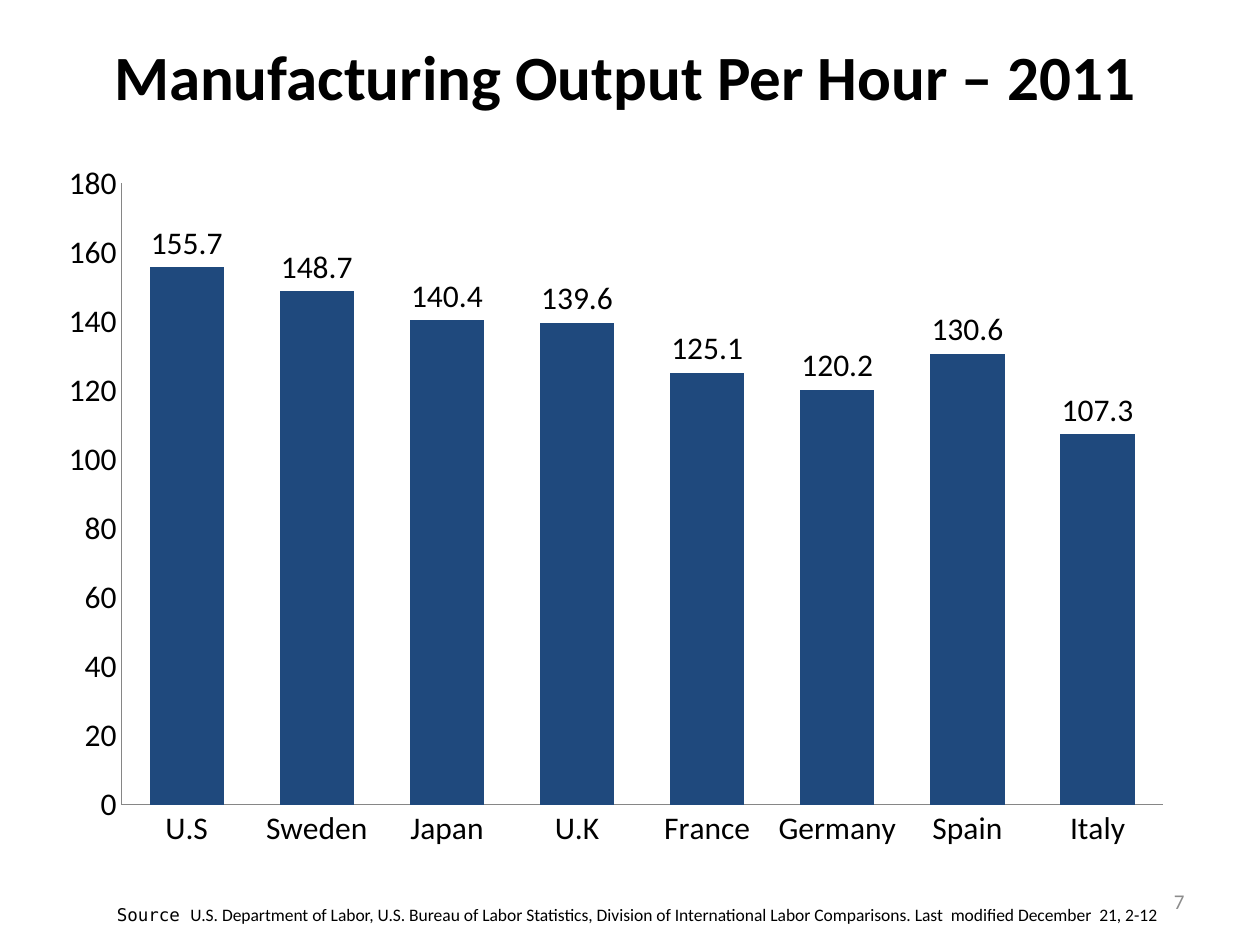
from lxml import etree
from pptx import Presentation
from pptx import util as u
from pptx.chart.data import CategoryChartData
from pptx.dml.color import RGBColor
from pptx.enum import chart as ch, text
from pptx.oxml.ns import qn

COLORS = {"text": "000000", "bar": "1F497D", "axis": "868686", "number": "8C8C8C"}
SANS, MONO = "Calibri", "DejaVu Sans Mono"

OUTPUT = [
    ("U.S", 155.7), ("Sweden", 148.7), ("Japan", 140.4), ("U.K", 139.6),
    ("France", 125.1), ("Germany", 120.2), ("Spain", 130.6), ("Italy", 107.3),
]
CHART_BOX = (0.33, 1.17, 9.08, 5.67)
PLOT = {"x": 0.07, "y": 0.05, "w": 0.91, "h": 0.87}

SOURCE = ("U.S. Department of Labor, U.S. Bureau of Labor Statistics, Division of "
          "International Labor Comparisons. Last  modified December  21, 2-12")
LEFT, CENTER, RIGHT = text.PP_ALIGN.LEFT, text.PP_ALIGN.CENTER, text.PP_ALIGN.RIGHT
TOP, MIDDLE = text.MSO_ANCHOR.TOP, text.MSO_ANCHOR.MIDDLE
TEXTS = [
    ((7.17, 6.95, 2.33, 0.4), RIGHT, MIDDLE, True, 12, False, "number", [("7", SANS)]),
    ((0.25, 0.25, 9.42, 1.01), CENTER, TOP, True, 36, True, "text",
     [("Manufacturing Output Per Hour – 2011", SANS)]),
    ((0.83, 7.11, 8.48, 0.29), LEFT, MIDDLE, False, 10, False, "text",
     [("Source ", MONO), (SOURCE, SANS)]),
]


def rgb(name):
    return RGBColor.from_string(COLORS[name])


def style(font, name, size, color, bold=False):
    font.name, font.size, font.bold = name, u.Pt(size), bold
    font.color.rgb = rgb(color)


def add_text(s, box, align, anchor, wrap, size, bold, color, runs):
    tf = s.shapes.add_textbox(*map(u.Inches, box)).text_frame
    tf.word_wrap, tf.vertical_anchor = wrap, anchor
    p = tf.paragraphs[0]
    p.alignment = align
    for content, name in runs:
        r = p.add_run()
        r.text = content
        style(r.font, name, size, color, bold)


def place_plot(chart):
    area = chart._chartSpace.chart.plotArea
    for old in area.findall(qn("c:layout")):
        area.remove(old)
    layout = etree.Element(qn("c:layout"))
    manual = etree.SubElement(layout, qn("c:manualLayout"))
    settings = {"layoutTarget": "inner", "xMode": "edge", "yMode": "edge", **PLOT}
    for tag, value in settings.items():
        etree.SubElement(manual, qn("c:" + tag)).set("val", str(value))
    area.insert(0, layout)


def add_output_chart(s):
    data = CategoryChartData()
    data.categories = [country for country, _ in OUTPUT]
    data.add_series("Series 1", [value for _, value in OUTPUT])
    chart = s.shapes.add_chart(ch.XL_CHART_TYPE.COLUMN_CLUSTERED,
                               *map(u.Inches, CHART_BOX), data).chart
    chart.has_legend = chart.has_title = False
    style(chart.font, SANS, 18, "text")
    for axis in (chart.category_axis, chart.value_axis):
        axis.has_major_gridlines = False
        axis.major_tick_mark = axis.minor_tick_mark = ch.XL_TICK_MARK.NONE
        axis.format.line.color.rgb = rgb("axis")
        axis.format.line.width = u.Pt(0.75)
    axis = chart.value_axis
    axis.minimum_scale, axis.maximum_scale, axis.major_unit = 0, 180, 20
    plot = chart.plots[0]
    plot.gap_width, plot.vary_by_categories = 75, False
    plot.has_data_labels = True
    labels = plot.data_labels
    labels.show_value = True
    labels.position = ch.XL_LABEL_POSITION.OUTSIDE_END
    style(labels.font, SANS, 18, "text")
    fill = plot.series[0].format.fill
    fill.solid()
    fill.fore_color.rgb = rgb("bar")
    place_plot(chart)


def main():
    prs = Presentation()
    prs.slide_width, prs.slide_height = u.Inches(10), u.Inches(7.5)
    s = prs.slides.add_slide(prs.slide_layouts[6])
    add_output_chart(s)
    for item in TEXTS:
        add_text(s, *item)
    prs.save("out.pptx")


if __name__ == "__main__":
    main()
